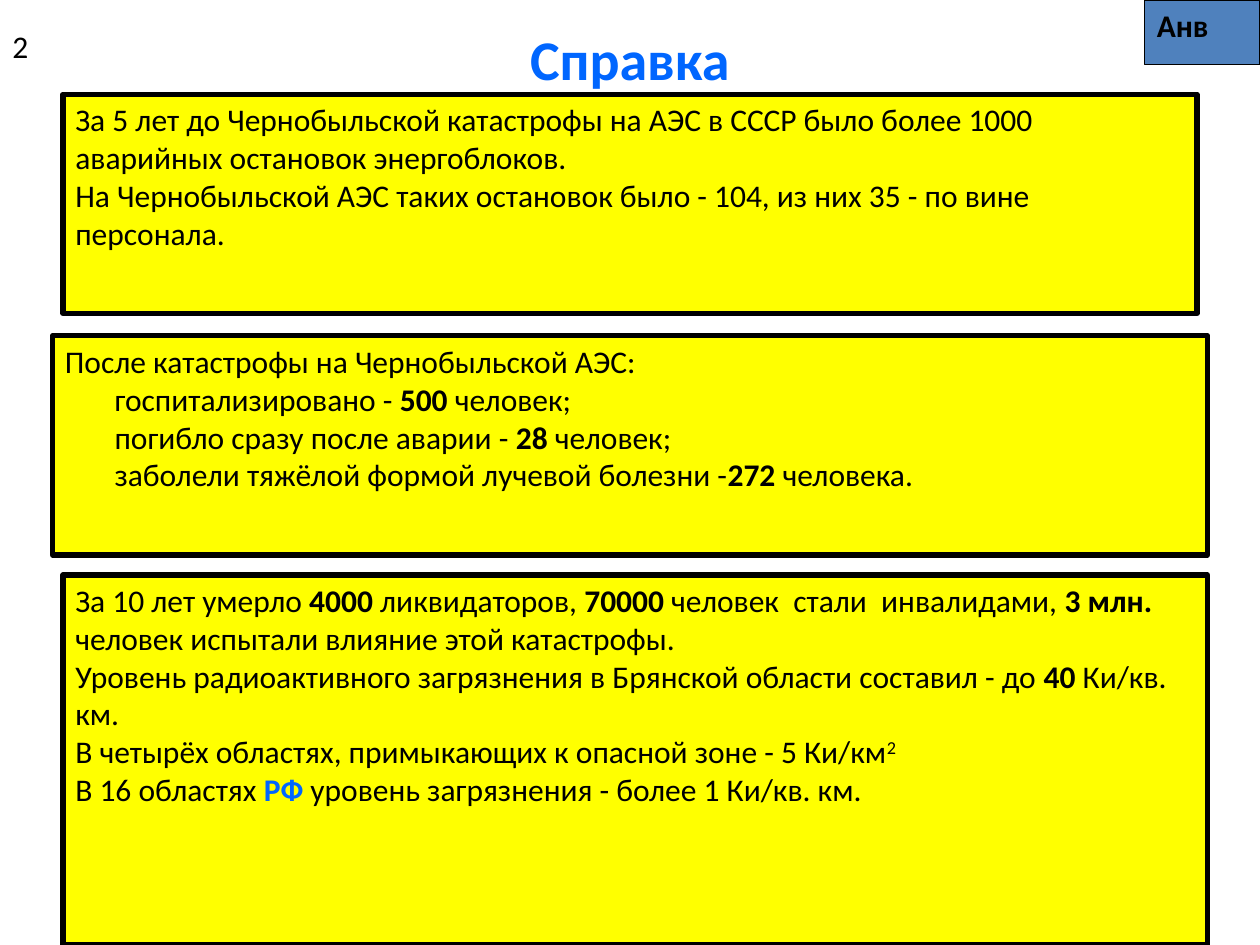
import dataclasses

import pptx
import pptx.dml.color
import pptx.enum.shapes
import pptx.enum.text
import pptx.util

Cm = pptx.util.Cm
Pt = pptx.util.Pt
Color = pptx.dml.color.RGBColor.from_string
Align = pptx.enum.text.PP_ALIGN
Anchor = pptx.enum.text.MSO_ANCHOR


@dataclasses.dataclass(frozen=True)
class Theme:
    font: str = "Calibri"
    ink: str = "000000"
    blue: str = "0066FF"
    panel: str = "FFFF00"
    tag: str = "4F81BD"
    title: int = 32
    body: int = 18
    thick: float = 3
    thin: float = 0.75


THEME = Theme()

BEFORE = [
    ["За 5 лет до Чернобыльской катастрофы на АЭС в СССР было более 1000 "
     "аварийных остановок энергоблоков."],
    ["На Чернобыльской АЭС таких остановок было - 104, из них 35 - по вине персонала."],
]
TOLL = [
    ["После катастрофы на Чернобыльской АЭС:"],
    ["госпитализировано - ", ("500", "bold"), " человек;"],
    ["погибло сразу после аварии - ", ("28 ", "bold"), "человек;"],
    ["заболели тяжёлой формой лучевой болезни -", ("272", "bold"), " человека."],
]
AFTER = [
    ["За 10 лет умерло ", ("4000", "bold"), " ликвидаторов, ", ("70000", "bold"),
     " человек  стали  инвалидами, ", ("3 млн.", "bold"),
     " человек испытали влияние этой катастрофы."],
    ["Уровень радиоактивного загрязнения в Брянской области составил - до ",
     ("40", "bold"), " Ки/кв. км."],
    ["В четырёх областях, примыкающих к опасной зоне - 5 Ки/км", ("2", "super")],
    ["В 16 областях ", ("РФ", "blue"), " уровень загрязнения - более 1 Ки/кв. км."],
]


def style(run, kind, size):
    font = run.font
    font.name = THEME.font
    font.size = Pt(size)
    font.bold = kind in ("bold", "blue")
    font.color.rgb = Color(THEME.blue if kind == "blue" else THEME.ink)
    if kind == "super":
        run._r.get_or_add_rPr().set("baseline", "30000")


def write(shape, lines, size=THEME.body, align=Align.LEFT, anchor=Anchor.TOP, indent=0):
    frame = shape.text_frame
    frame.word_wrap = True
    frame.vertical_anchor = anchor
    for row, line in enumerate(lines):
        para = frame.add_paragraph() if row else frame.paragraphs[0]
        para.alignment = align
        if row and indent:
            para._p.get_or_add_pPr().set("marL", str(Cm(indent)))
        for part in line:
            text, kind = (part, "plain") if isinstance(part, str) else part
            run = para.add_run()
            run.text = text
            style(run, kind, size)


def label(slide, place, lines, **look):
    write(slide.shapes.add_textbox(*map(Cm, place)), lines, **look)


def panel(slide, place, lines, fill=THEME.panel, line=THEME.thick, **look):
    kind = pptx.enum.shapes.MSO_SHAPE.RECTANGLE
    shape = slide.shapes.add_shape(kind, *map(Cm, place))
    shape.shadow.inherit = False
    shape.fill.solid()
    shape.fill.fore_color.rgb = Color(fill)
    shape.line.color.rgb = Color(THEME.ink)
    shape.line.width = Pt(line)
    write(shape, lines, **look)


def main():
    deck = pptx.Presentation()
    deck.slide_width, deck.slide_height = Cm(25.4), Cm(19.05)
    slide = deck.slides.add_slide(deck.slide_layouts[6])
    label(slide, (1.9, 0, 21.6, 2.33), [[("Справка", "blue")]],
          size=THEME.title, align=Align.CENTER, anchor=Anchor.MIDDLE)
    panel(slide, (1.27, 1.9, 22.86, 4.42), BEFORE)
    panel(slide, (1.06, 6.77, 23.28, 4.42), TOLL, indent=1)
    panel(slide, (1.27, 11.59, 23.07, 7.46), AFTER)
    label(slide, (0, 0.42, 1.27, 1.27), [["2"]])
    panel(slide, (23.07, 0, 2.33, 1.3), [[("Анв", "bold")]],
          fill=THEME.tag, line=THEME.thin)
    deck.save("out.pptx")


if __name__ == "__main__":
    main()
